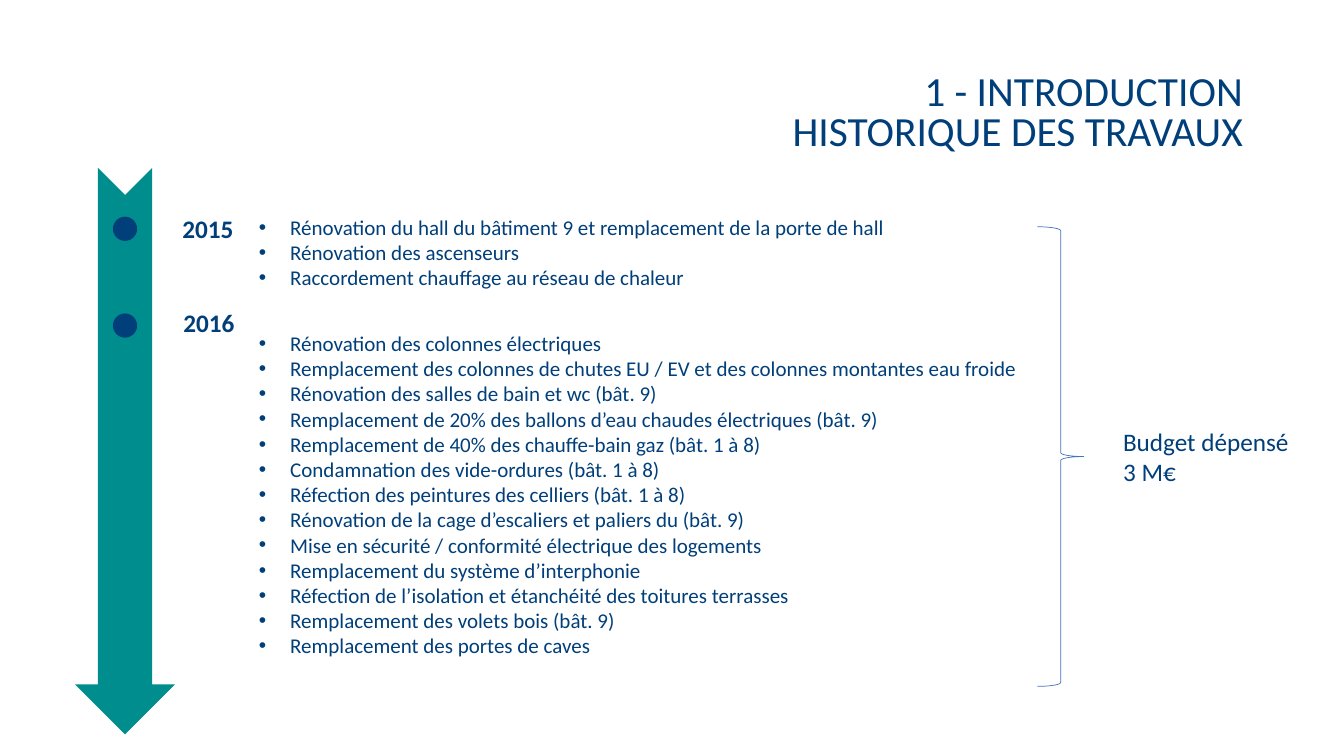
from pptx import Presentation
from pptx.dml.color import RGBColor
from pptx.enum.shapes import MSO_SHAPE
from pptx.enum.text import MSO_ANCHOR, PP_ALIGN
from pptx.oxml.ns import qn
from pptx.util import Inches, Pt
from lxml import etree

NAVY = RGBColor(0x00, 0x3F, 0x7A)
TEAL = RGBColor(0x00, 0x8D, 0x8D)
BLUE = RGBColor(0x44, 0x72, 0xC4)
ARROW = MSO_SHAPE.NOTCHED_RIGHT_ARROW
DOT = MSO_SHAPE.OVAL
BRACE = MSO_SHAPE.RIGHT_BRACE
TOP = MSO_ANCHOR.TOP
LEFT, RIGHT = PP_ALIGN.LEFT, PP_ALIGN.RIGHT

TITLE = ["1 - INTRODUCTION", "HISTORIQUE DES TRAVAUX"]
WORKS_2015 = [
    "Rénovation du hall du bâtiment 9 et remplacement de la porte de hall",
    "Rénovation des ascenseurs",
    "Raccordement chauffage au réseau de chaleur",
]
WORKS_2016 = [
    "Rénovation des colonnes électriques",
    "Remplacement des colonnes de chutes EU / EV et des colonnes montantes eau froide",
    "Rénovation des salles de bain et wc (bât. 9)",
    "Remplacement de 20% des ballons d’eau chaudes électriques (bât. 9)",
    "Remplacement de 40% des chauffe-bain gaz (bât. 1 à 8)",
    "Condamnation des vide-ordures (bât. 1 à 8)",
    "Réfection des peintures des celliers (bât. 1 à 8)",
    "Rénovation de la cage d’escaliers et paliers du (bât. 9)",
    "Mise en sécurité / conformité électrique des logements",
    "Remplacement du système d’interphonie",
    "Réfection de l’isolation et étanchéité des toitures terrasses",
    "Remplacement des volets bois (bât. 9)",
    "Remplacement des portes de caves",
]


class Board:
    font = {"name": "Calibri", "size": Pt(18), "bold": False}
    indent = Inches(0.31)

    def __init__(self, slide):
        self.shapes = slide.shapes

    def text(self, box, lines, align=LEFT, space=None, bullet=False, **style):
        frame = self.shapes.add_textbox(*map(Inches, box)).text_frame
        frame.word_wrap = True
        frame.vertical_anchor = TOP
        for i, line in enumerate(lines):
            para = frame.add_paragraph() if i else frame.paragraphs[0]
            para.alignment = align
            if space:
                para.line_spacing = space
            if bullet:
                self.bullet(para)
            run = para.add_run()
            run.text = line
            for key, value in {**self.font, **style}.items():
                setattr(run.font, key, value)
            run.font.color.rgb = NAVY

    def bullet(self, para):
        props = para._p.get_or_add_pPr()
        props.set("marL", str(self.indent))
        props.set("indent", str(-self.indent))
        etree.SubElement(props, qn("a:buFont")).set("typeface", "Arial")
        etree.SubElement(props, qn("a:buChar")).set("char", "•")

    def shape(self, kind, box, fill=None, line=None):
        item = self.shapes.add_shape(kind, *map(Inches, box))
        item.shadow.inherit = False
        for part, color in ((item.fill, fill), (item.line.fill, line)):
            if color is None:
                part.background()
            else:
                part.solid()
                part.fore_color.rgb = color
        return item

    def arrow(self, box):
        item = self.shape(ARROW, box, fill=TEAL)
        item.rotation = 90
        item.adjustments[0] = 0.544
        item.adjustments[1] = 0.5

    def brace(self, box):
        self.shape(BRACE, box, line=BLUE).line.width = Pt(0.5)

    def year(self, label, left, top, dot):
        self.shape(DOT, (1.12, dot, 0.24, 0.24), fill=NAVY)
        self.text((left, top, 0.76, 0.4), [label], bold=True)

    def works(self, box, lines):
        self.text(box, lines, bullet=True, size=Pt(15))


def main():
    deck = Presentation()
    deck.slide_width, deck.slide_height = Inches(13.33), Inches(7.5)
    board = Board(deck.slides.add_slide(deck.slide_layouts[6]))
    board.text((4.62, 0.69, 7.81, 1.32), TITLE, RIGHT, 0.8, size=Pt(29.6))
    board.arrow((-1.57, 3.98, 5.62, 0.99))
    board.year("2015", 1.71, 2.07, 2.15)
    board.works((2.47, 2.08, 8.21, 0.86), WORKS_2015)
    board.year("2016", 1.72, 3, 3.11)
    board.works((2.47, 3.23, 7.82, 3.38), WORKS_2016)
    board.brace((10.29, 2.25, 0.46, 4.56))
    board.text((11.04, 4.18, 1.88, 0.71), ["Budget dépensé 3 M€"])
    deck.save("out.pptx")


if __name__ == "__main__":
    main()
